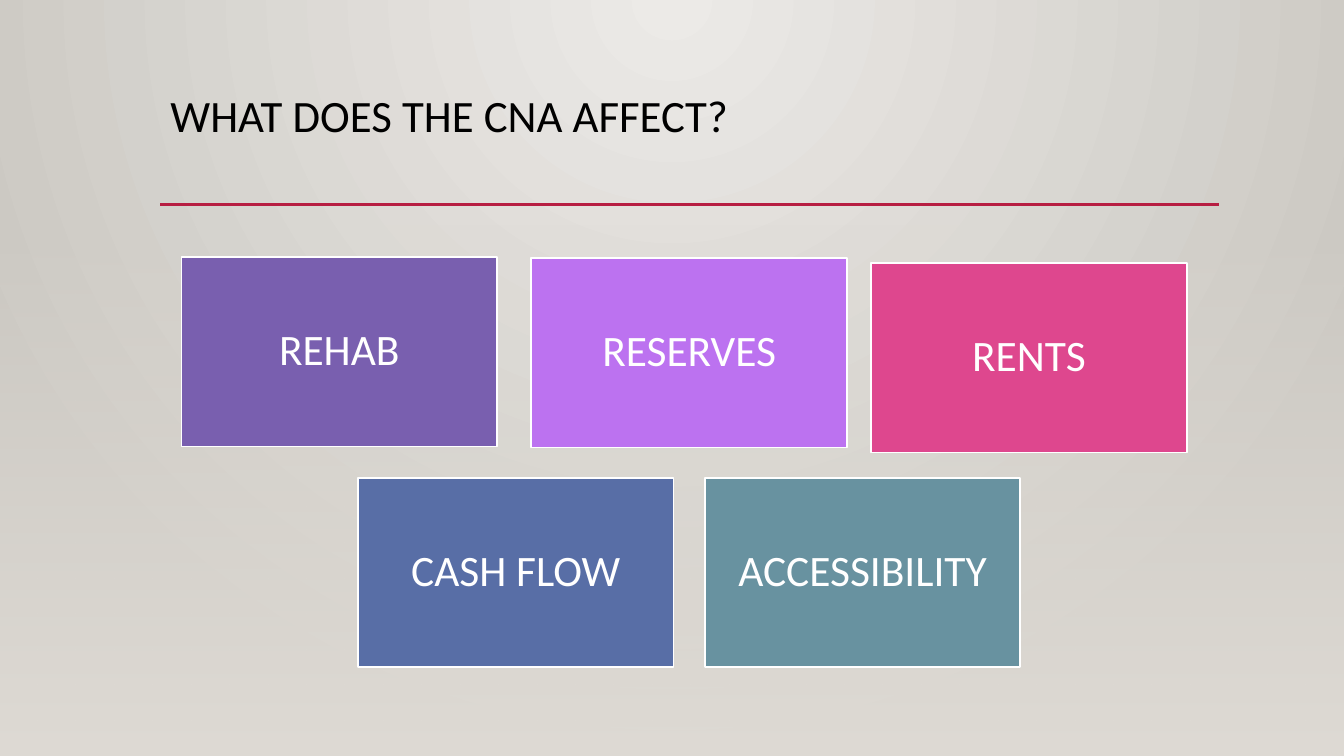
from dataclasses import dataclass

from pptx import Presentation
from pptx.dml.color import RGBColor
from pptx.enum.shapes import MSO_CONNECTOR, MSO_SHAPE
from pptx.enum.text import MSO_ANCHOR, PP_ALIGN
from pptx.oxml import parse_xml
from pptx.oxml.ns import nsdecls, qn
from pptx.util import Inches, Pt

RECT, STRAIGHT = MSO_SHAPE.RECTANGLE, MSO_CONNECTOR.STRAIGHT
TOP, MIDDLE = MSO_ANCHOR.TOP, MSO_ANCHOR.MIDDLE
LEFT, CENTER = PP_ALIGN.LEFT, PP_ALIGN.CENTER
TITLE_ONLY = 5


@dataclass(frozen=True)
class Theme:
    font: str = "Calibri"
    title_size: int = 32
    card_size: int = 31
    ink: str = "000000"
    white: str = "FFFFFF"
    rule: str = "B71E42"
    glow: str = "ECEAE7"
    edge: str = "CAC7C1"
    floor: str = "DFDBD5"


THEME = Theme()
WIDTH, HEIGHT = 13.33, 7.5
CARD_W, CARD_H, CARD_INSET = 3.13, 1.88, 0.13
# Label, colour, left, top of each card
CARDS = [
    ("REHAB", "795FAF", 1.8, 2.55),
    ("RESERVES", "BC72F0", 5.27, 2.56),
    ("RENTS", "DE478E", 8.64, 2.61),
    ("CASH FLOW", "586EA6", 3.55, 4.74),
    ("ACCESSIBILITY", "6892A0", 6.99, 4.74),
]
GLOW_SHAPE = ('<a:path path="circle"><a:fillToRect l="43000" t="0" '
              'r="43000" b="100000"/></a:path>')
DOWNWARD = '<a:lin ang="5400000" scaled="0"/>'


def set_gradient(fill, element, start, end, geometry, start_alpha=100):
    """Fill element from start to end colour along the given geometry."""
    fill.solid()
    solid = next(element.iter(qn("a:solidFill")))
    gradient = parse_xml(
        f'<a:gradFill {nsdecls("a")} rotWithShape="1"><a:gsLst>'
        f'<a:gs pos="0"><a:srgbClr val="{start}">'
        f'<a:alpha val="{start_alpha * 1000}"/></a:srgbClr></a:gs>'
        f'<a:gs pos="100000"><a:srgbClr val="{end}"/></a:gs>'
        f'</a:gsLst>{geometry}</a:gradFill>')
    solid.getparent().replace(solid, gradient)


def write(tf, text, size, color, align, anchor):
    tf.word_wrap = True
    tf.vertical_anchor = anchor
    p = tf.paragraphs[0]
    p.alignment, p.line_spacing = align, 0.9
    r = p.add_run()
    r.text = text
    for name, value in {"name": THEME.font, "size": Pt(size)}.items():
        setattr(r.font, name, value)
    r.font.color.rgb = RGBColor.from_string(color)


def add_backdrop(s, top):
    """Radial glow, with a fade to the floor colour below top."""
    set_gradient(s.background.fill, s.element, THEME.glow, THEME.edge, GLOW_SHAPE)
    sp = s.shapes.add_shape(RECT, 0, Inches(top), Inches(WIDTH), Inches(HEIGHT - top))
    sp.shadow.inherit = False
    sp.line.fill.background()
    set_gradient(sp.fill, sp.element, THEME.floor, THEME.floor, DOWNWARD, 0)


def add_heading(s, text, left, top, width, height):
    """Title with a rule along the bottom of its box."""
    title = s.shapes.title
    box = {"left": left, "top": top, "width": width, "height": height}
    for name, value in box.items():
        setattr(title, name, Inches(value))
    write(title.text_frame, text, THEME.title_size, THEME.ink, LEFT, TOP)
    y = Inches(top + height)
    rule = s.shapes.add_connector(STRAIGHT, Inches(left), y, Inches(left + width), y)
    rule.line.color.rgb = RGBColor.from_string(THEME.rule)
    rule.line.width = Pt(2.5)
    rule.element.spPr.append(parse_xml(f'<a:effectLst {nsdecls("a")}/>'))


def add_card(s, label, color, left, top):
    sp = s.shapes.add_shape(RECT, *map(Inches, (left, top, CARD_W, CARD_H)))
    sp.shadow.inherit = False
    sp.fill.solid()
    sp.fill.fore_color.rgb = RGBColor.from_string(color)
    sp.line.color.rgb = RGBColor.from_string(THEME.white)
    sp.line.width = Pt(1.25)
    tf = sp.text_frame
    for side in ("left", "top", "right", "bottom"):
        setattr(tf, f"margin_{side}", Inches(CARD_INSET))
    write(tf, label, THEME.card_size, THEME.white, CENTER, MIDDLE)


def main():
    prs = Presentation()
    prs.slide_width, prs.slide_height = Inches(WIDTH), Inches(HEIGHT)
    s = prs.slides.add_slide(prs.slide_layouts[TITLE_ONLY])
    add_backdrop(s, 2.21)
    add_heading(s, "WHAT DOES THE CNA AFFECT?", 1.59, 0.88, 10.5, 1.15)
    for card in CARDS:
        add_card(s, *card)
    prs.save("out.pptx")


if __name__ == "__main__":
    main()
